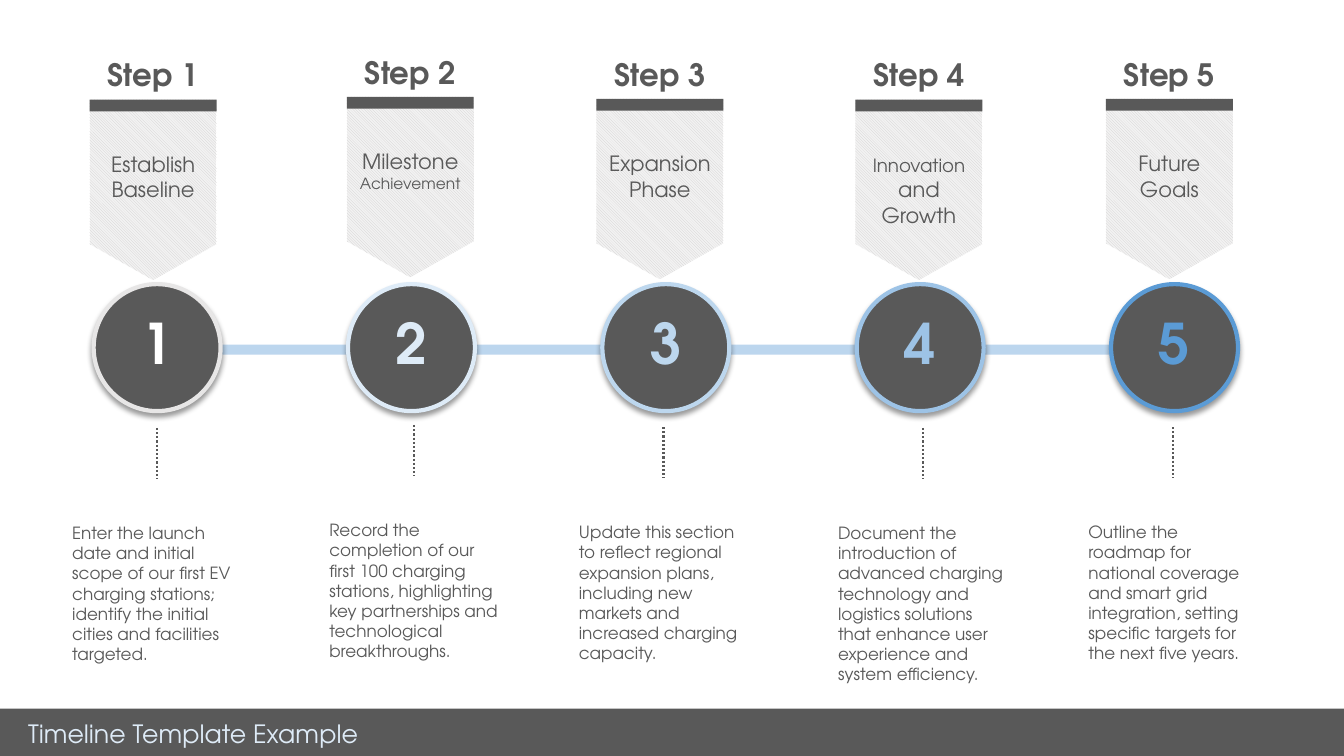
"""Build a five-step timeline slide."""
from lxml import etree
from pptx import Presentation
from pptx.dml.color import RGBColor
from pptx.enum.dml import MSO_LINE, MSO_PATTERN
from pptx.enum.shapes import MSO_CONNECTOR, MSO_SHAPE
from pptx.enum.text import MSO_AUTO_SIZE, PP_ALIGN
from pptx.oxml.ns import qn
from pptx.util import Cm, Pt

OVAL, RECT = MSO_SHAPE.OVAL, MSO_SHAPE.RECTANGLE
FLAG = MSO_SHAPE.FLOWCHART_OFFPAGE_CONNECTOR
HATCH = MSO_PATTERN.LIGHT_DOWNWARD_DIAGONAL
DOTS, LINE = MSO_LINE.ROUND_DOT, MSO_CONNECTOR.STRAIGHT
LEFT, MID = PP_ALIGN.LEFT, PP_ALIGN.CENTER
FIT = MSO_AUTO_SIZE.SHAPE_TO_FIT_TEXT
FONT = "TeX Gyre Adventor"
INK = {"dark": "595959", "hatch": "D0CECE", "pale": "F2F2F2", "white": "FFFFFF",
       "grey": "E7E6E6", "ice": "DEEBF7", "sky": "BDD7EE", "blue": "9DC3E6",
       "deep": "5B9BD5", "black": "000000"}
WIDE, HIGH, SIDE, PITCH = 33.87, 19.05, 3.2, 6.41

RINGS = [("grey", "white"), ("ice", "ice"), ("sky", "sky"),
         ("blue", "blue"), ("deep", "deep")]
STEPS = [
    (2.26, 2.51, [("Establish Baseline", 15)],
     "Enter the launch date and initial scope of our first EV charging stations; "
     "identify the initial cities and facilities targeted."),
    (8.74, 2.44, [("Milestone ", 15), ("Achievement", 11)],
     "Record the completion of our first 100 charging stations, highlighting "
     "key partnerships and technological breakthroughs."),
    (15.03, 2.49, [("Expansion Phase", 15)],
     "Update this section to reflect regional expansion plans, including new "
     "markets and increased charging capacity."),
    (21.56, 2.51, [("Innovation", 13), (" and Growth", 15)],
     "Document the introduction of advanced charging technology and logistics "
     "solutions that enhance user experience and system efficiency."),
    (27.87, 2.49, [("Future Goals", 15)],
     "Outline the roadmap for national coverage and smart grid integration, "
     "setting specific targets for the next five years."),
]


def tint(name):
    """Return the named colour."""
    return RGBColor.from_string(INK[name])


def shape(slide, kind, box, fill="dark"):
    """Add a flat shape with no outline."""
    item = slide.shapes.add_shape(kind, *map(Cm, box))
    item.shadow.inherit = False
    item.fill.solid()
    item.fill.fore_color.rgb = tint(fill)
    item.line.fill.background()
    return item


def text(slide, box, runs, ink="dark", bold=False, align=MID):
    """Add a wrapped text box from (words, size) runs."""
    frame = slide.shapes.add_textbox(*map(Cm, box)).text_frame
    frame.word_wrap = True
    frame.auto_size = FIT
    para = frame.paragraphs[0]
    para.alignment = align
    for words, size in runs:
        run = para.add_run()
        run.text = words
        run.font.name, run.font.size, run.font.bold = FONT, Pt(size), bold
        run.font.color.rgb = tint(ink)


def rule(slide, ends, ink, width):
    """Add a straight line without a shadow."""
    item = slide.shapes.add_connector(LINE, *map(Cm, ends))
    item.line.color.rgb = tint(ink)
    item.line.width = Pt(width)
    etree.SubElement(item.element.spPr, qn("a:effectLst"))
    return item


def fade(color, part):
    """Set the opacity of a colour element in percent."""
    etree.SubElement(color, qn("a:alpha"), val=str(part * 1000))


def shade(item):
    """Add a soft shadow below a shape."""
    effects = item.element.spPr.find(qn("a:effectLst"))
    cast = etree.SubElement(effects, qn("a:outerShdw"), blurRad=str(Pt(4)),
                            dist=str(Pt(3)), dir="5400000", algn="t", rotWithShape="0")
    fade(etree.SubElement(cast, qn("a:srgbClr"), val=INK["black"]), 40)


def track(slide, left, top):
    """Draw the bar and the numbered circles along it."""
    mid = top + 1.65
    bar = rule(slide, (left + 2.36, mid, left + 4 * PITCH + 2.28, mid), "blue", 7)
    fade(next(bar.element.spPr.iter(qn("a:srgbClr"))), 67)
    for spot, (ring, ink) in enumerate(RINGS):
        x = left + spot * PITCH
        disc = shape(slide, OVAL, (x, top, SIDE, SIDE))
        disc.line.color.rgb = tint(ring)
        disc.line.width = Pt(3)
        shade(disc)
        text(slide, (x, top + 0.5, SIDE, 1.96), [(str(spot + 1), 40)], ink, True)


def step(slide, x, y, label, title, body):
    """Draw one step: flag, label, title, dotted line and body."""
    flag = shape(slide, FLAG, (x, y, SIDE, 4.55))
    flag.fill.patterned()
    flag.fill.pattern = HATCH
    flag.fill.fore_color.rgb = tint("hatch")
    flag.fill.back_color.rgb = tint("pale")
    text(slide, (x, y - 1.22, SIDE, 1.19), [(label, 22)], bold=True)
    shape(slide, RECT, (x, y, SIDE, 0.3))
    text(slide, (x, y + 1.19, SIDE, 1.55), title)
    text(slide, (x - 0.69, y + 10.54, 4.75, 3.84), [(body, 12)], align=LEFT)
    drop = rule(slide, (x + 1.69, y + 8.27, x + 1.69, y + 9.56), "dark", 1.5)
    drop.line.dash_style = DOTS


def foot(slide, top):
    """Draw the title band at the bottom."""
    shape(slide, RECT, (0, top, WIDE, HIGH - top))
    text(slide, (0.46, top + 0.12, 19.94, 1.02),
         [("Timeline Template Example", 18)], "ice", align=LEFT)


def main():
    """Build and save the deck."""
    deck = Presentation()
    deck.slide_width, deck.slide_height = Cm(WIDE), Cm(HIGH)
    slide = deck.slides.add_slide(deck.slide_layouts[6])
    track(slide, 2.36, 7.16)
    for count, (x, y, title, body) in enumerate(STEPS, 1):
        step(slide, x, y, f"Step {count}", title, body)
    foot(slide, 17.86)
    deck.save("out.pptx")


if __name__ == "__main__":
    main()
